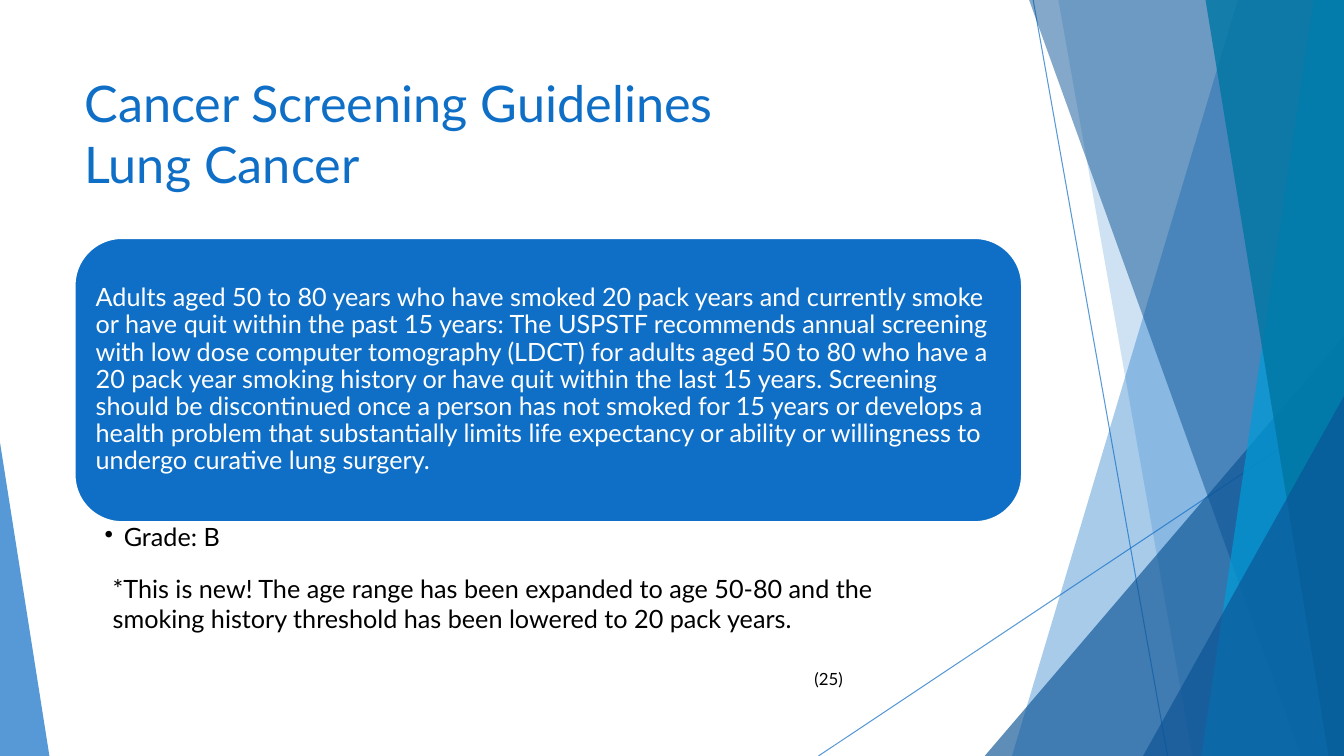
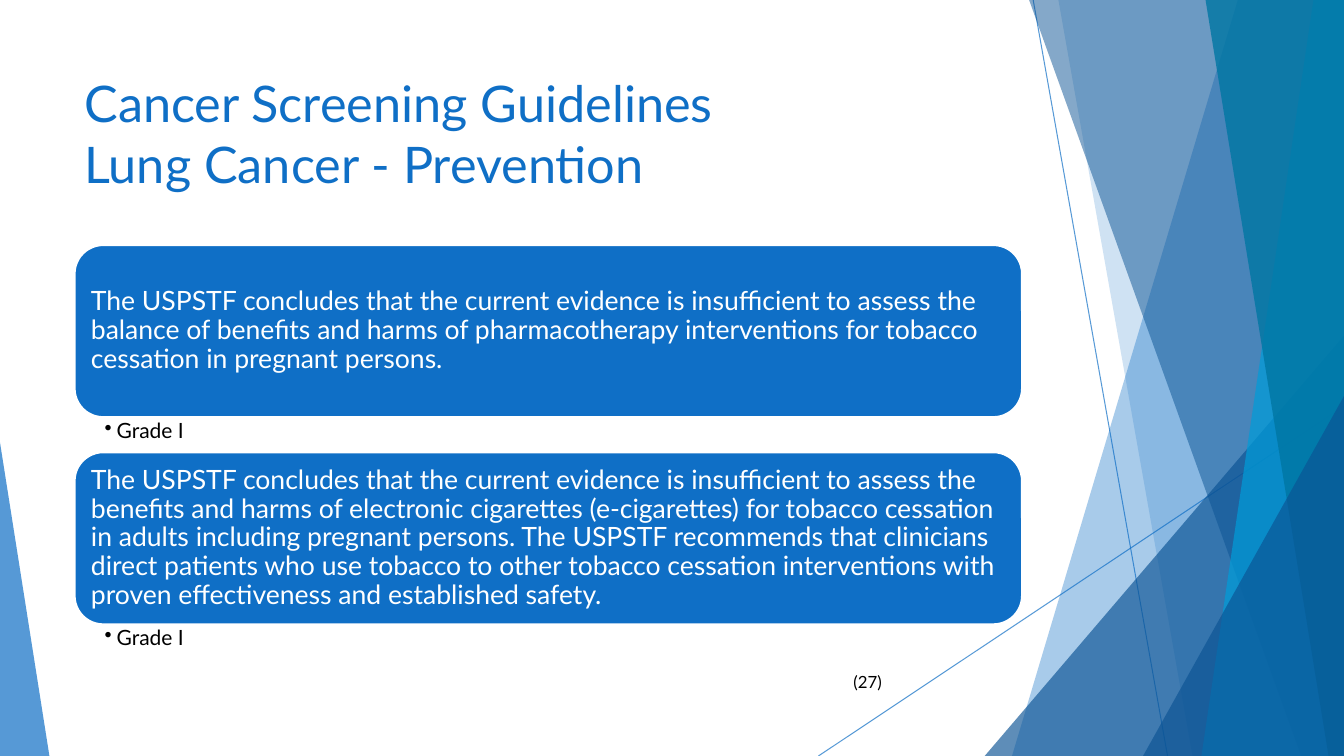
from dataclasses import dataclass

from lxml import etree
from pptx import Presentation
from pptx.dml.color import RGBColor
from pptx.enum import shapes, text as txt
from pptx.oxml.ns import qn
from pptx.util import Pt


@dataclass(frozen=True)
class Theme:
    font: str = "Lato"
    blue: str = "0F6FC6"
    navy: str = "0B5394"
    cyan: str = "009DD9"
    teal: str = "0076A3"
    white: str = "FFFFFF"
    black: str = "000000"
    title: int = 36
    body: int = 18
    source: int = 12


T = Theme()
W, H = 960, 540
LEFT, WIDTH = 53.3, 676.8


def write(sp, content, size=T.body, color=T.black, insets=(7.2, 3.6, 7.2, 3.6),
          anchor=txt.MSO_ANCHOR.TOP, spacing=1.0, bullet_indent=None):
    """Fill a shape with one formatted paragraph; insets are left, top, right, bottom."""
    tf = sp.text_frame
    tf.word_wrap = True
    tf.vertical_anchor = anchor
    tf.margin_left, tf.margin_top, tf.margin_right, tf.margin_bottom = map(Pt, insets)
    p = tf.paragraphs[0]
    p.text = content
    p.alignment = txt.PP_ALIGN.LEFT
    p.line_spacing = spacing
    for r in p.runs:
        r.font.name, r.font.size = T.font, Pt(size)
        r.font.color.rgb = RGBColor.from_string(color)
    if bullet_indent:
        pPr = p._p.get_or_add_pPr()
        pPr.set("marL", str(Pt(bullet_indent)))
        pPr.set("indent", str(-Pt(bullet_indent)))
        etree.SubElement(pPr, qn("a:buChar"), char="•")


def paint(fmt, sp, color, alpha=100):
    """Give a fill one solid colour, with its opacity in percent."""
    fmt.solid()
    fmt.fore_color.rgb = RGBColor.from_string(color)
    if alpha < 100:
        for clr in sp.element.iter(qn("a:srgbClr")):
            etree.SubElement(clr, qn("a:alpha"), val=str(alpha * 1000))


prs = Presentation()
prs.slide_width, prs.slide_height = Pt(W), Pt(H)
blank = prs.slide_layouts[6]
for ph in list(blank.placeholders):
    ph.element.getparent().remove(ph.element)

# Slide content: cards are (top, height, text, grade)
SLIDES = [
    dict(
        title="Cancer Screening Guidelines\nLung Cancer",
        size=18, inset=5.2, grade_size=18, bullet_indent=13.7,
        cards=[(170, 203,
                "Adults aged 50 to 80 years who have smoked 20 pack years and currently "
                "smoke or have quit within the past 15 years: The USPSTF recommends annual "
                "screening with low dose computer tomography (LDCT) for adults aged 50 to 80 "
                "who have a 20 pack year smoking history or have quit within the last 15 "
                "years. Screening should be discontinued once a person has not smoked for 15 "
                "years or develops a health problem that substantially limits life expectancy "
                "or ability or willingness to undergo curative lung surgery.",
                "Grade: B")],
        notes=[(73.4, 406, 562.3, 51, T.body,
                "*This is new! The age range has been expanded to age 50-80 and the "
                "smoking history threshold has been lowered to 20 pack years."),
               (574.6, 474.5, 45, 21.6, T.source, "(25)")],
    ),
    dict(
        title="Cancer Screening Guidelines\nLung Cancer - Prevention",
        size=19, inset=5.7, grade_size=15, bullet_indent=8.6,
        cards=[(175, 123,
                "The USPSTF concludes that the current evidence is insufficient to assess "
                "the balance of benefits and harms of pharmacotherapy interventions for "
                "tobacco cessation in pregnant persons.",
                "Grade I"),
               (323, 123,
                "The USPSTF concludes that the current evidence is insufficient to assess "
                "the benefits and harms of electronic cigarettes (e-cigarettes) for tobacco "
                "cessation in adults including pregnant persons. The USPSTF recommends that "
                "clinicians direct patients who use tobacco to other tobacco cessation "
                "interventions with proven effectiveness and established safety.",
                "Grade I")],
        notes=[(602.6, 476, 45, 21.6, T.source, "(27)")],
    ),
]

# Facets, back to front: bands run from top x to bottom x and reach the right
# edge; peaks are triangles standing on the bottom edge (left, top, width, apex)
FACETS = [
    ("band", (884.2, 722.9), T.blue, 36),
    ("band", (756, 851.8), T.blue, 20),
    ("peak", (703.4, 239.8, 256.6, 1), T.navy, 66),
    ("band", (735.1, 929.5), T.navy, 50),
    ("band", (938.2, 858.2), T.cyan, 70),
    ("band", (861.1, 949), T.teal, 80),
    ("peak", (816.5, 283, 143.5, 1), T.navy, 66),
    ("peak", (0, 316.1, 35.3, 0), T.blue, 70),
]
RULES = [(738, 0, 834, H), (W, 290, 584.6, H)]

# Shared background: drawn once, then moved to the layout
s = prs.slides.add_slide(blank)
for ends in RULES:
    sp = s.shapes.add_connector(shapes.MSO_CONNECTOR.STRAIGHT, *map(Pt, ends))
    sp.line.width = Pt(0.75)
    paint(sp.line.fill, sp, T.blue, 70)
    etree.SubElement(sp.element.spPr, qn("a:effectLst"))
for kind, place, color, alpha in FACETS:
    if kind == "band":
        top_x, bottom_x = map(Pt, place)
        outline = s.shapes.build_freeform(top_x, 0)
        outline.add_line_segments([(Pt(W), 0), (Pt(W), Pt(H)), (bottom_x, Pt(H))])
        sp = outline.convert_to_shape()
    else:
        left, top, width, apex = place
        sp = s.shapes.add_shape(shapes.MSO_SHAPE.ISOSCELES_TRIANGLE,
                                Pt(left), Pt(top), Pt(width), Pt(H - top))
        sp.adjustments[0] = apex
    sp.shadow.inherit = False
    sp.line.fill.background()
    paint(sp.fill, sp, color, alpha)
for sp in list(s.shapes):
    blank.shapes.element.append(sp.element)

# Slides
for i, spec_ in enumerate(SLIDES):
    if i:
        s = prs.slides.add_slide(blank)

    # Title
    sp = s.shapes.add_textbox(Pt(LEFT), Pt(48.2), Pt(WIDTH), Pt(103.7))
    write(sp, spec_["title"], size=T.title, color=T.blue)

    # Recommendation cards, each with its grade below
    for top, height, advice, grade in spec_["cards"]:
        sp = s.shapes.add_shape(shapes.MSO_SHAPE.ROUNDED_RECTANGLE,
                                Pt(LEFT), Pt(top), Pt(WIDTH), Pt(height))
        sp.shadow.inherit = False
        paint(sp.fill, sp, T.blue)
        paint(sp.line.fill, sp, T.white)
        sp.line.width = Pt(1.5)
        write(sp, advice, size=spec_["size"], color=T.white, spacing=0.9,
              insets=[spec_["inset"]] * 4, anchor=txt.MSO_ANCHOR.MIDDLE)
        sp = s.shapes.add_textbox(Pt(LEFT), Pt(top + height), Pt(WIDTH), Pt(24.5))
        write(sp, grade, size=spec_["grade_size"], spacing=0.9,
              insets=(21.5, 2.1, 10.5, 2.1), bullet_indent=spec_["bullet_indent"])

    # Remarks and source number
    for left, top, width, height, size, remark in spec_["notes"]:
        sp = s.shapes.add_textbox(Pt(left), Pt(top), Pt(width), Pt(height))
        write(sp, remark, size=size)

prs.save("out.pptx")
